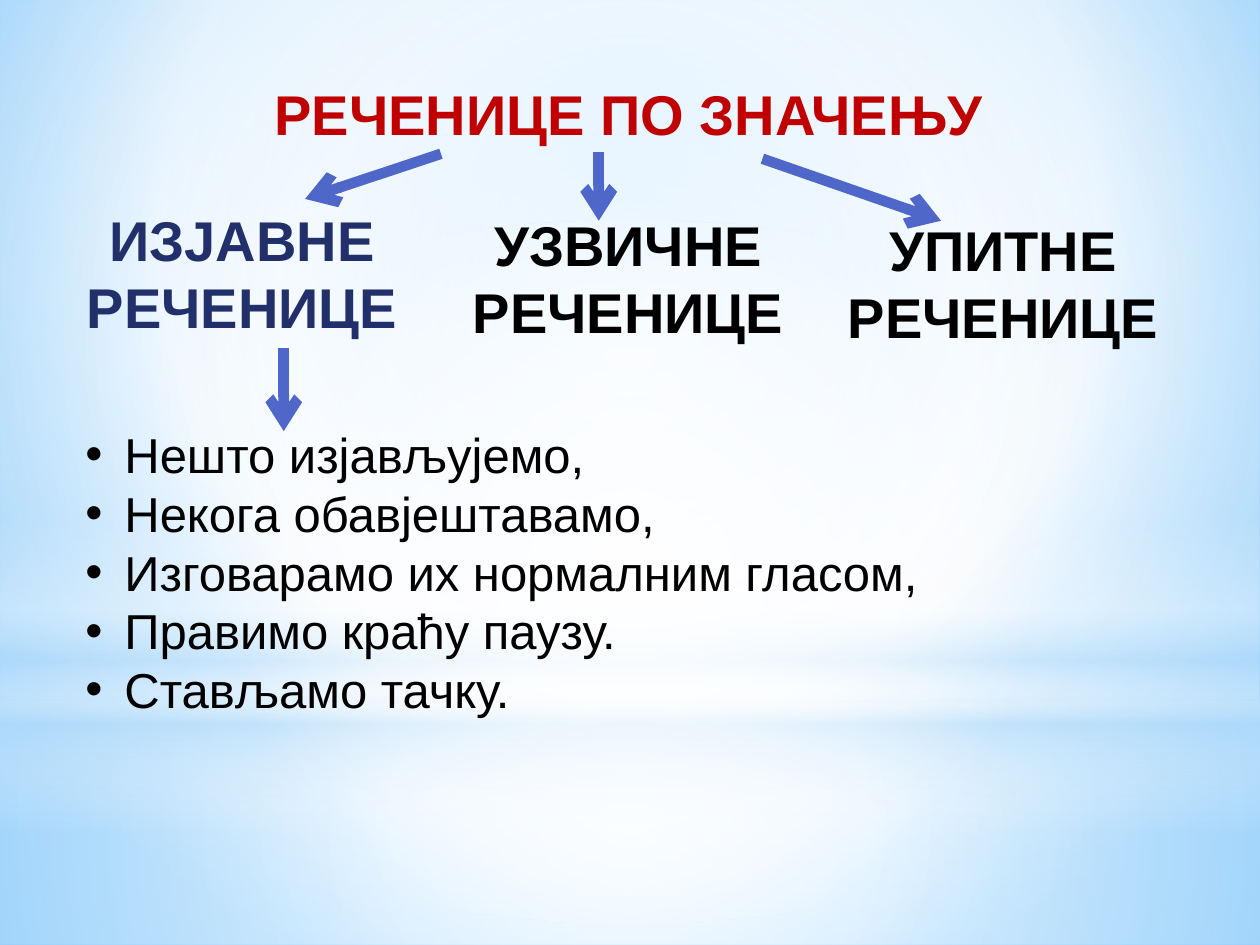
from lxml import etree
from pptx import Presentation
from pptx.dml.color import RGBColor
from pptx.enum.shapes import MSO_CONNECTOR, MSO_SHAPE
from pptx.enum.text import MSO_ANCHOR, MSO_AUTO_SIZE, PP_ALIGN
from pptx.oxml.ns import qn
from pptx.util import Cm, Pt

RECT, OVAL = MSO_SHAPE.RECTANGLE, MSO_SHAPE.OVAL
STRAIGHT = MSO_CONNECTOR.STRAIGHT
LEFT, CENTER = PP_ALIGN.LEFT, PP_ALIGN.CENTER
FONT = "Arial"
TITLE_ONLY = 5

COLORS = {
    "title": "C00000", "active": "21306A", "text": "000000",
    "arrow": "4E67C8", "white": "FFFFFF", "haze": "B4DCFA",
    "sky": "9ED5FF", "edge": "5BB9FF",
}
MIDDLE = (50, 50, 50, 50)

# shape, top, height, focus (None is a vertical fade), stops (position, colour, opacity)
BACKDROP = [
    (RECT, 14.17, 4.88, MIDDLE,
     [(0, "white", 91), (37, "white", 76), (100, "haze", 79)]),
    (RECT, 0, 14.17, MIDDLE,
     [(0, "white", 89), (48, "white", 62), (100, "haze", 79)]),
    (RECT, 10.46, 6.35, None,
     [(0, "white", 0), (29, "white", 30), (45, "haze", 40),
      (55, "white", 26), (65, "haze", 60), (100, "white", 0)]),
    (OVAL, 4.45, 14.17, MIDDLE, [(0, "white", 100), (56, "white", 0)]),
]
KINDS = [
    ("ИЗЈАВНЕ РЕЧЕНИЦЕ", 1.47, 4.01, "active"),
    ("УЗВИЧНЕ РЕЧЕНИЦЕ", 9.25, 4.11, "text"),
    ("УПИТНЕ РЕЧЕНИЦЕ", 16.81, 4.22, "text"),
]
TRAITS = [
    "Нешто изјављујемо,",
    "Некога обавјештавамо,",
    "Изговарамо их нормалним гласом,",
    "Правимо краћу паузу.",
    "Стављамо тачку.",
]
ARROWS = [
    (8.89, 3.1, 6.15, 4.01),
    (12.07, 3.07, 12.07, 4.45),
    (15.37, 3.2, 18.97, 4.45),
    (5.72, 7.01, 5.72, 8.69),
]


def set_gradient(fill, parent, stops, focus):
    """Fill with a gradient that is circular around focus, or vertical without one."""
    fill.solid()
    grad = etree.Element(qn("a:gradFill"), rotWithShape="1")
    gs_list = etree.SubElement(grad, qn("a:gsLst"))
    for pos, color, opacity in stops:
        gs = etree.SubElement(gs_list, qn("a:gs"), pos=str(pos * 1000))
        clr = etree.SubElement(gs, qn("a:srgbClr"), val=COLORS[color])
        if opacity < 100:
            etree.SubElement(clr, qn("a:alpha"), val=str(opacity * 1000))
    if focus:
        circle = etree.SubElement(grad, qn("a:path"), path="circle")
        sides = {k: str(v * 1000) for k, v in zip("ltrb", focus)}
        etree.SubElement(circle, qn("a:fillToRect"), sides)
    else:
        etree.SubElement(grad, qn("a:lin"), ang="5400000", scaled="0")
    parent.replace(parent.find(qn("a:solidFill")), grad)


def add_backdrop(s, width):
    bg_fill = s.background.fill
    bg_fill.solid()
    set_gradient(bg_fill, s.element.find(".//" + qn("p:bgPr")),
                 [(0, "sky", 100), (60, "white", 100), (100, "edge", 100)],
                 (20, 10, 20, 60))
    for kind, top, height, focus, stops in BACKDROP:
        sp = s.shapes.add_shape(kind, 0, Cm(top), width, Cm(height))
        sp.shadow.inherit = False
        sp.line.fill.background()
        set_gradient(sp.fill, sp.element.spPr, stops, focus)


def format_text(tf, size, color, bold, align):
    tf.vertical_anchor = MSO_ANCHOR.TOP
    for p in tf.paragraphs:
        p.alignment = align
        for r in p.runs:
            r.font.name, r.font.size, r.font.bold = FONT, Pt(size), bold
            r.font.color.rgb = RGBColor.from_string(COLORS[color])


def set_title(s, text):
    title = s.shapes.title
    title.left, title.top = Cm(5.28), Cm(1.47)
    title.width, title.height = Cm(14.94), Cm(1.63)
    tf = title.text_frame
    tf.text = text
    tf.word_wrap = False
    tf.auto_size = MSO_AUTO_SIZE.SHAPE_TO_FIT_TEXT
    format_text(tf, 32, "title", True, LEFT)
    title.element.getparent().append(title.element)  # in front of the backdrop


def add_text(s, text, left, top, width, height, size, color, bold, align):
    tf = s.shapes.add_textbox(Cm(left), Cm(top), Cm(width), Cm(height)).text_frame
    tf.word_wrap = True
    tf.text = text
    format_text(tf, size, color, bold, align)
    return tf


def add_bullets(tf):
    indent = Cm(0.79)
    for p in tf.paragraphs:
        pPr = p._p.get_or_add_pPr()
        pPr.set("marL", str(indent))
        pPr.set("indent", str(-indent))
        etree.SubElement(pPr, qn("a:buFont"), typeface=FONT)
        etree.SubElement(pPr, qn("a:buChar"), char="•")


def add_arrow(s, *ends):
    line = s.shapes.add_connector(STRAIGHT, *map(Cm, ends))
    line.line.width = Pt(6)
    line.line.color.rgb = RGBColor.from_string(COLORS["arrow"])
    spPr = line.element.spPr
    etree.SubElement(spPr.find(qn("a:ln")), qn("a:tailEnd"), type="arrow")
    etree.SubElement(spPr, qn("a:effectLst"))


def main():
    prs = Presentation()
    prs.slide_width, prs.slide_height = Cm(25.4), Cm(19.05)
    s = prs.slides.add_slide(prs.slide_layouts[TITLE_ONLY])
    add_backdrop(s, prs.slide_width)
    set_title(s, "РЕЧЕНИЦЕ ПО ЗНАЧЕЊУ")
    for text, left, top, color in KINDS:
        add_text(s, text, left, top, 6.83, 3, 32, color, True, CENTER)
    traits = add_text(s, "\n".join(TRAITS), 1.47, 8.43, 17.5, 7.01,
                      28, "text", False, LEFT)
    add_bullets(traits)
    for ends in ARROWS:
        add_arrow(s, *ends)
    prs.save("out.pptx")


if __name__ == "__main__":
    main()
